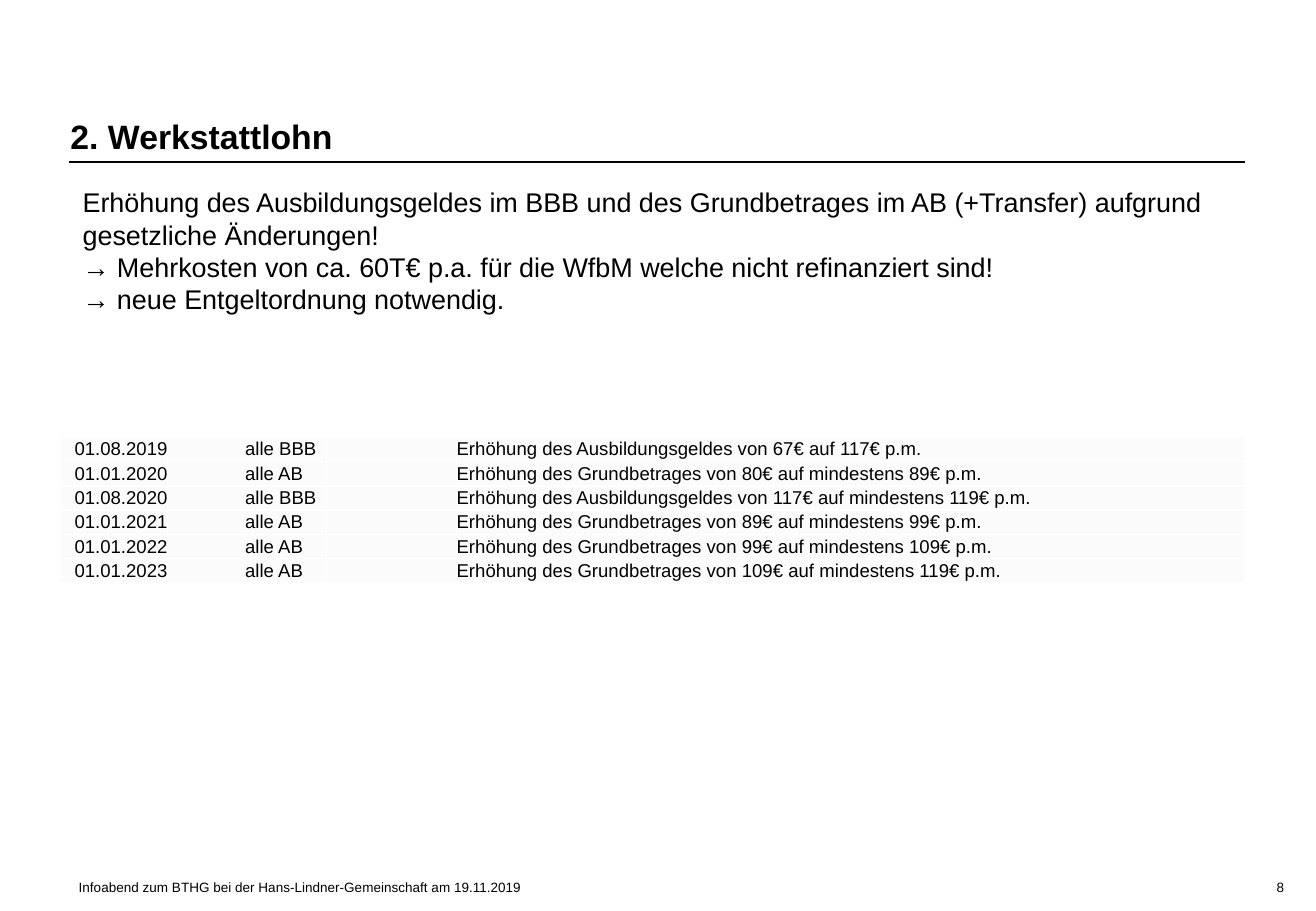
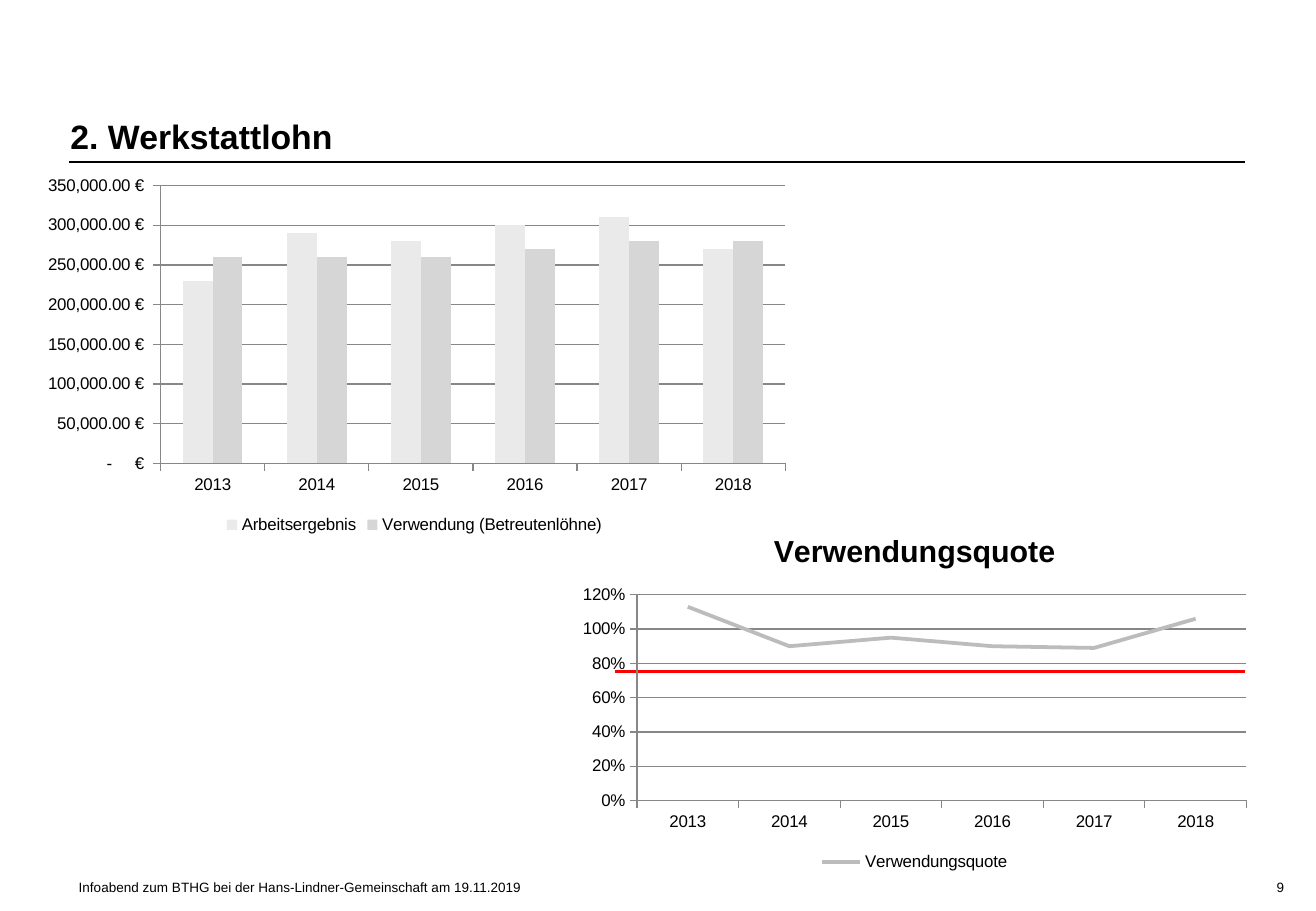
"""Build two slides on workshop wages: planned increases and how earnings are used."""
from lxml import etree
from pptx import Presentation
from pptx.chart.data import CategoryChartData
from pptx.dml.color import RGBColor
from pptx.enum import chart as ch, shapes, text
from pptx.oxml import parse_xml
from pptx.oxml.ns import nsdecls, qn
from pptx.util import Pt

BLACK = RGBColor(0x00, 0x00, 0x00)
WHITE = RGBColor(0xFF, 0xFF, 0xFF)
RED = RGBColor(0xFF, 0x00, 0x00)
CELL_GREY = RGBColor(0xFB, 0xFB, 0xFB)
RESULT_GREY = RGBColor(0xEA, 0xEA, 0xEA)
WAGES_GREY = RGBColor(0xD6, 0xD6, 0xD6)
QUOTA_GREY = RGBColor(0xBC, 0xBC, 0xBC)
GRID_GREY = RGBColor(0x87, 0x87, 0x87)
FONT = "Arial"
TITLE = "2. Werkstattlohn"
FOOTER = "Infoabend zum BTHG bei der Hans-Lindner-Gemeinschaft am 19.11.2019"
LEFT, RIGHT = 41.76, 738
YEARS = ["2013", "2014", "2015", "2016", "2017", "2018"]
EURO_FORMAT = ('_-* #,##0.00\\ [$€-407]_-;\\-* #,##0.00\\ [$€-407]_-;'
               '_-* "-"??\\ [$€-407]_-;_-@_-')
COLUMN_WIDTHS = [63.4, 94.3, 77, 467.3]
ROW_HEIGHT = 14.4
GROUP_INDENT = 45.9
INTRO = [
    "Erhöhung des Ausbildungsgeldes im BBB und des Grundbetrages im AB (+Transfer) "
    "aufgrund gesetzliche Änderungen!",
    "→ Mehrkosten von ca. 60T€ p.a. für die WfbM welche nicht refinanziert sind!",
    "→ neue Entgeltordnung notwendig.",
]
INCREASES = [
    ("01.08.2019", "alle BBB", "", "Erhöhung des Ausbildungsgeldes von 67€ auf 117€ p.m."),
    ("01.01.2020", "alle AB", "", "Erhöhung des Grundbetrages von 80€ auf mindestens 89€ p.m."),
    ("01.08.2020", "alle BBB", "",
     "Erhöhung des Ausbildungsgeldes von 117€ auf mindestens 119€ p.m."),
    ("01.01.2021", "alle AB", "", "Erhöhung des Grundbetrages von 89€ auf mindestens 99€ p.m."),
    ("01.01.2022", "alle AB", "", "Erhöhung des Grundbetrages von 99€ auf mindestens 109€ p.m."),
    ("01.01.2023", "alle AB", "", "Erhöhung des Grundbetrages von 109€ auf mindestens 119€ p.m."),
]


def style_font(font, size, bold=False):
    """Apply the deck's typeface in black."""
    font.name, font.size, font.bold = FONT, Pt(size), bold
    font.color.rgb = BLACK


def place(shape, left, top, width, height):
    """Move and size a shape."""
    shape.left, shape.top = Pt(left), Pt(top)
    shape.width, shape.height = Pt(width), Pt(height)


def set_margins(target, left=0):
    """Remove all insets except an optional left one."""
    target.margin_left = Pt(left)
    target.margin_top = target.margin_right = target.margin_bottom = 0


def add_label(slide, label, box, align):
    """Add a small line of text at the foot of the slide."""
    frame = slide.shapes.add_textbox(*map(Pt, box)).text_frame
    frame.word_wrap = True
    frame.text = label
    paragraph = frame.paragraphs[0]
    paragraph.alignment = align
    style_font(paragraph.font, 8)


def add_rule(slide, left, y, color, width):
    """Draw a horizontal line to the right margin."""
    rule = slide.shapes.add_connector(
        shapes.MSO_CONNECTOR.STRAIGHT, Pt(left), Pt(y), Pt(RIGHT), Pt(y))
    rule.line.color.rgb = color
    rule.line.width = Pt(width)
    etree.SubElement(rule._element.spPr, qn("a:effectLst"))


def add_page(prs, layout, number):
    """Add a slide with title, rule, footer and page number."""
    slide = prs.slides.add_slide(prs.slide_layouts.get_by_name(layout))
    title = slide.shapes.title
    place(title, LEFT, 44.64, RIGHT - LEFT, 48.24)
    frame = title.text_frame
    frame.text = TITLE
    frame.vertical_anchor = text.MSO_ANCHOR.BOTTOM
    set_margins(frame)
    paragraph = frame.paragraphs[0]
    paragraph.alignment = text.PP_ALIGN.LEFT
    style_font(paragraph.font, 20, True)
    add_rule(slide, 41, 96, BLACK, 0.75)
    add_label(slide, FOOTER, (39.6, 517.7, 312.5, 17.3), text.PP_ALIGN.LEFT)
    add_label(slide, str(number), (RIGHT, 517.7, 42, 16.6), text.PP_ALIGN.CENTER)
    return slide


def fill_intro(body):
    """Write the introduction without bullets."""
    place(body, LEFT, 106.5, RIGHT - LEFT, 85)
    frame = body.text_frame
    frame.text = "\n".join(INTRO)
    frame.auto_size = text.MSO_AUTO_SIZE.NONE
    for paragraph in frame.paragraphs:
        paragraph.space_before = Pt(0)
        style_font(paragraph.font, 16)
        properties = paragraph._p.get_or_add_pPr()
        properties.set("marL", "0")
        properties.set("indent", "0")
        properties.insert_element_before(
            parse_xml(f"<a:buNone {nsdecls('a')}/>"), "a:tabLst", "a:defRPr")


def style_cell(cell, content, column):
    """Write one table cell with pale fill and white borders."""
    for side in ("L", "R", "T", "B"):
        cell._tc.get_or_add_tcPr().append(parse_xml(
            f'<a:ln{side} {nsdecls("a")} w="{Pt(1)}"><a:solidFill>'
            f'<a:srgbClr val="{WHITE}"/></a:solidFill></a:ln{side}>'))
    cell.fill.solid()
    cell.fill.fore_color.rgb = CELL_GREY
    cell.vertical_anchor = text.MSO_ANCHOR.MIDDLE
    set_margins(cell, GROUP_INDENT if column == 1 else 0)
    cell.text = content
    paragraph = cell.text_frame.paragraphs[0]
    paragraph.alignment = text.PP_ALIGN.RIGHT if column == 0 else text.PP_ALIGN.LEFT
    style_font(paragraph.font, 11)
    if not content:
        etree.SubElement(paragraph._p, qn("a:endParaRPr"), sz="1100")


def add_increases(slide):
    """Add the table of planned increases."""
    table = slide.shapes.add_table(
        len(INCREASES), len(COLUMN_WIDTHS), Pt(36), Pt(259.2),
        Pt(sum(COLUMN_WIDTHS)), Pt(ROW_HEIGHT * len(INCREASES))).table
    table.first_row = table.horz_banding = False
    for column, width in zip(table.columns, COLUMN_WIDTHS):
        column.width = Pt(width)
    for row, increase in enumerate(INCREASES):
        table.rows[row].height = Pt(ROW_HEIGHT)
        for column, content in enumerate(increase):
            style_cell(table.cell(row, column), content, column)


def add_year_chart(slide, kind, box, series, maximum, step, number_format):
    """Add a transparent chart by year with grey grid and bottom legend."""
    data = CategoryChartData(number_format=number_format)
    data.categories = YEARS
    for name, values in series:
        data.add_series(name, values)
    chart = slide.shapes.add_chart(kind, *map(Pt, box), data).chart
    style_font(chart.font, 10)
    chart.has_title = False
    chart.has_legend = True
    chart.legend.position = ch.XL_LEGEND_POSITION.BOTTOM
    chart.legend.include_in_layout = False
    chart._chartSpace.find(qn("c:chart")).addnext(parse_xml(
        f'<c:spPr {nsdecls("c", "a")}><a:noFill/><a:ln><a:noFill/></a:ln></c:spPr>'))
    chart.plots[0].vary_by_categories = False
    values_axis = chart.value_axis
    values_axis.minimum_scale, values_axis.maximum_scale = 0, maximum
    values_axis.major_unit = step
    values_axis.tick_labels.number_format = number_format
    values_axis.tick_labels.number_format_is_linked = False
    values_axis.has_major_gridlines = True
    for axis in (values_axis, chart.category_axis):
        axis.major_tick_mark = ch.XL_TICK_MARK.OUTSIDE
        axis.format.line.color.rgb = GRID_GREY
        axis.format.line.width = Pt(0.75)
    grid = values_axis.major_gridlines.format.line
    grid.color.rgb = GRID_GREY
    grid.width = Pt(0.75)
    return chart


def add_earnings_chart(slide):
    """Compare earnings with the wages paid."""
    chart = add_year_chart(
        slide, ch.XL_CHART_TYPE.COLUMN_CLUSTERED, (16.6, 100, 458, 219.6),
        [("Arbeitsergebnis", (230000, 290000, 280000, 300000, 310000, 270000)),
         ("Verwendung (Betreutenlöhne)", (260000, 260000, 260000, 270000, 280000, 280000))],
        350000, 50000, EURO_FORMAT)
    plot = chart.plots[0]
    plot.gap_width, plot.overlap = 150, 0
    for series, color in zip(plot.series, (RESULT_GREY, WAGES_GREY)):
        series.format.fill.solid()
        series.format.fill.fore_color.rgb = color


def add_quota_chart(slide):
    """Show the share of earnings paid out as wages."""
    chart = add_year_chart(
        slide, ch.XL_CHART_TYPE.LINE, (337.3, 303.4, 409.7, 216),
        [("Verwendungsquote", (1.13, 0.9, 0.95, 0.9, 0.89, 1.06))], 1.2, 0.2, "0%")
    chart.has_title = True
    heading = chart.chart_title.text_frame
    heading.text = "Verwendungsquote"
    style_font(heading.paragraphs[0].font, 18, True)
    quota = chart.plots[0].series[0]
    quota.smooth = False
    quota.format.line.color.rgb = QUOTA_GREY
    quota.format.line.width = Pt(2.25)


def main():
    """Build and save both slides."""
    prs = Presentation()
    prs.slide_width, prs.slide_height = Pt(780), Pt(540)
    increases = add_page(prs, "Title and Content", 8)
    fill_intro(increases.placeholders[1])
    add_increases(increases)
    earnings = add_page(prs, "Title Only", 9)
    add_rule(earnings, 364.3, 398.2, RED, 2)
    add_earnings_chart(earnings)
    add_quota_chart(earnings)
    prs.save("out.pptx")


if __name__ == "__main__":
    main()
